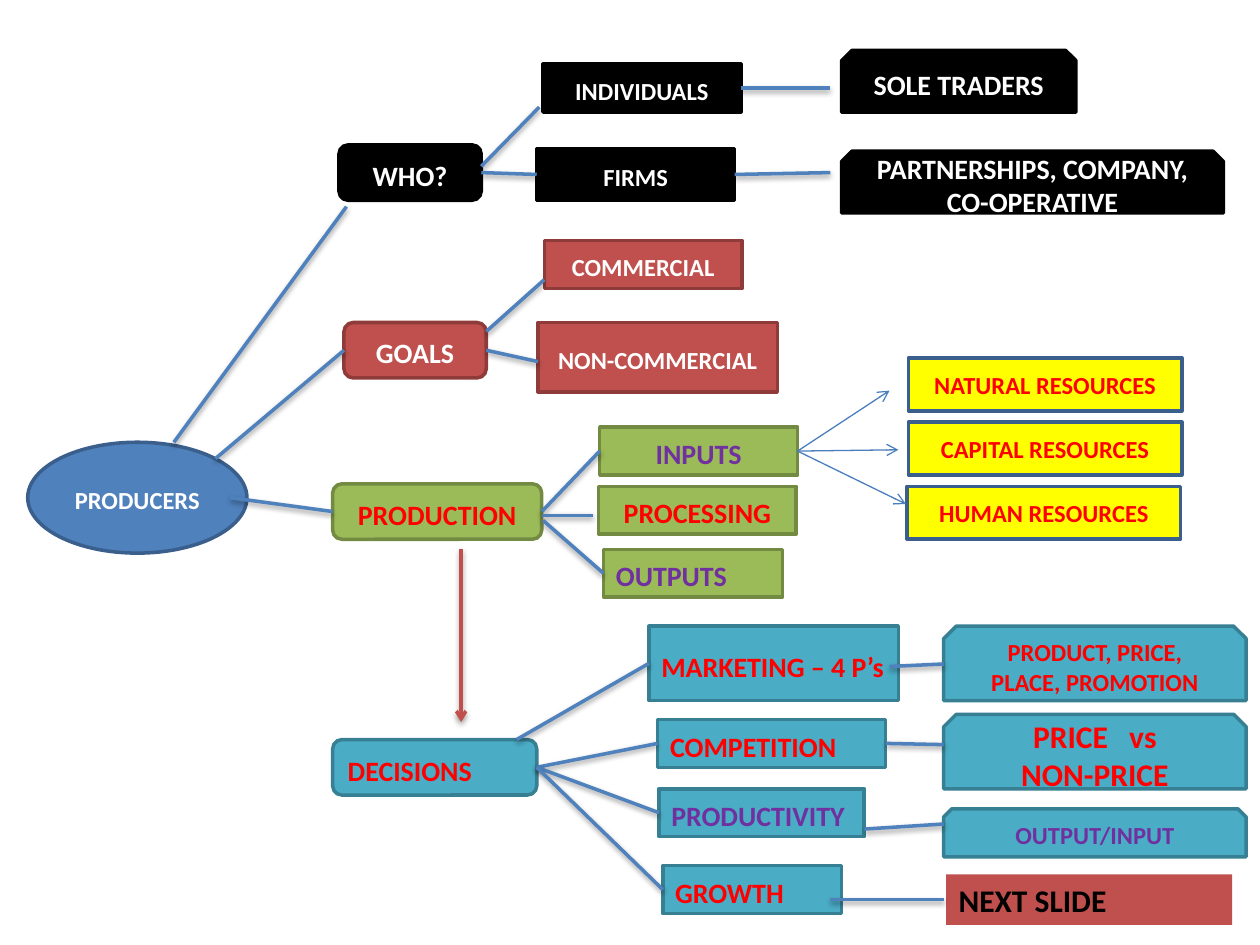
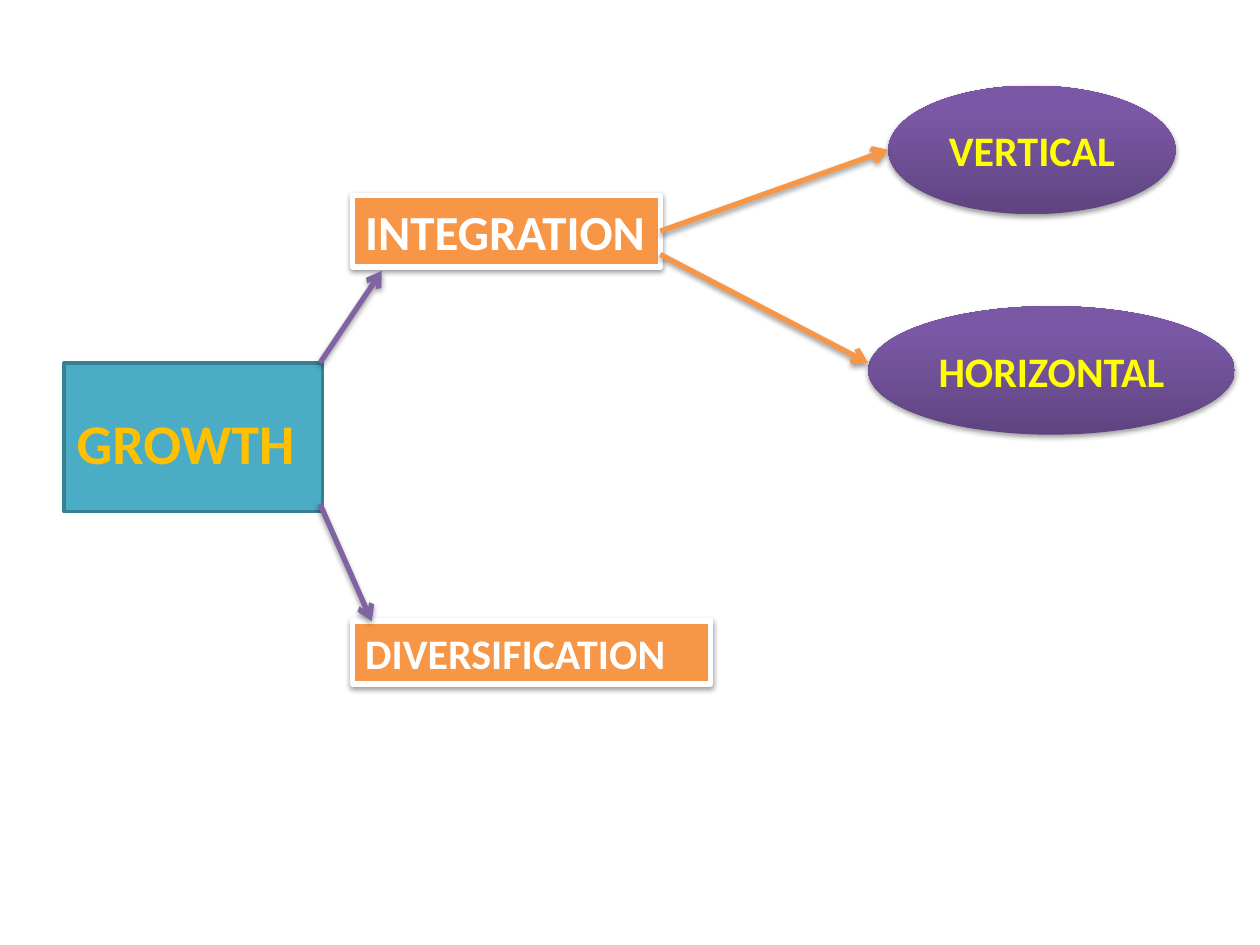
from lxml import etree
from pptx import Presentation
from pptx.dml.color import RGBColor
from pptx.enum.shapes import MSO_CONNECTOR, MSO_SHAPE
from pptx.enum.text import MSO_ANCHOR, MSO_AUTO_SIZE, PP_ALIGN
from pptx.oxml.ns import qn
from pptx.util import Inches, Pt

# Palette
WHITE = RGBColor(0xFF, 0xFF, 0xFF)
BLACK = RGBColor(0x00, 0x00, 0x00)
RED = RGBColor(0xFF, 0x00, 0x00)
VIOLET = RGBColor(0x70, 0x30, 0xA0)
YELLOW = RGBColor(0xFF, 0xFF, 0x00)
GOLD = RGBColor(0xFF, 0xC0, 0x00)
BLUE = RGBColor(0x4F, 0x81, 0xBD)
DARK_BLUE = RGBColor(0x3A, 0x5F, 0x8C)
THIN_BLUE = RGBColor(0x4B, 0x7E, 0xBC)
BRICK = RGBColor(0xC0, 0x50, 0x4D)
DARK_BRICK = RGBColor(0x8E, 0x3B, 0x39)
GREEN = RGBColor(0x9B, 0xBB, 0x59)
DARK_GREEN = RGBColor(0x73, 0x8A, 0x42)
TEAL = RGBColor(0x4B, 0xAC, 0xC6)
DARK_TEAL = RGBColor(0x37, 0x7F, 0x92)
ORANGE = RGBColor(0xF7, 0x96, 0x46)
PURPLE = RGBColor(0x80, 0x64, 0xA2)
DEEP_PURPLE = RGBColor(0x5F, 0x44, 0x80)
SOFT_PURPLE = RGBColor(0x7B, 0x58, 0xA6)

# Fill and outline of each branch
OWNERS = (BLACK, BLACK)
AIMS = (BRICK, DARK_BRICK)
MAKING = (GREEN, DARK_GREEN)
CHOICES = (TEAL, DARK_TEAL)
RESOURCES = (YELLOW, DARK_BLUE)

FONT = "Calibri"
COLUMNS, ROWS = 100, 75
LEFT, RIGHT = 1, 3
RECTANGLE = MSO_SHAPE.RECTANGLE
ROUNDED = MSO_SHAPE.ROUNDED_RECTANGLE
SNIPPED = MSO_SHAPE.SNIP_2_SAME_RECTANGLE


def write_text(shape, text, size=16, color=WHITE, align=PP_ALIGN.CENTER,
               spaced=True, gap=0):
    """Fill a shape with lines of text; gap widens the spaces, in points."""
    frame = shape.text_frame
    frame.word_wrap = True
    for number, line in enumerate(text.split("\n")):
        paragraph = frame.add_paragraph() if number else frame.paragraphs[0]
        paragraph.alignment = align
        if spaced:
            paragraph.line_spacing = 1.15
            paragraph.space_after = Pt(10)
        for piece in line.partition(" ") if gap else (line,):
            if not piece:
                continue
            run = paragraph.add_run()
            run.text = piece
            run.font.name, run.font.size, run.font.bold = FONT, Pt(size), True
            run.font.color.rgb = color
            if piece == " ":
                run._r.get_or_add_rPr().set("spc", str(gap * 100))


class Diagram:
    def __init__(self, presentation):
        self.presentation = presentation
        self.column = presentation.slide_width / COLUMNS
        self.row = presentation.slide_height / ROWS
        self.slide = None

    def new_slide(self):
        layout = self.presentation.slide_layouts[6]
        self.slide = self.presentation.slides.add_slide(layout)

    def place(self, x, y):
        return round(x * self.column), round(y * self.row)

    def add_shadow(self, effects):
        shadow = etree.SubElement(
            effects, qn("a:outerShdw"), blurRad="40000", dist="20000",
            dir="5400000", rotWithShape="0")
        color = etree.SubElement(shadow, qn("a:srgbClr"), val="000000")
        etree.SubElement(color, qn("a:alpha"), val="38000")

    def box(self, kind, area, text, style, line_width=2, shadow=False,
            grow=False, **text_format):
        x, y, width, height = area
        shape = self.slide.shapes.add_shape(
            kind, *self.place(x, y), *self.place(width, height))
        fill, outline = style
        if isinstance(fill, RGBColor):
            shape.fill.solid()
            shape.fill.fore_color.rgb = fill
        else:
            shape.fill.gradient()
            shape.fill.gradient_angle = 90
            for stop, color, position in zip(
                    shape.fill.gradient_stops, fill, (0, 0.8)):
                stop.color.rgb, stop.position = color, position
        if outline is None:
            shape.line.fill.background()
        else:
            shape.line.color.rgb = outline
            shape.line.width = Pt(line_width)
        shape.shadow.inherit = False
        if shadow:
            self.add_shadow(shape._element.spPr.find(qn("a:effectLst")))
        frame = shape.text_frame
        frame.vertical_anchor = MSO_ANCHOR.TOP if grow else MSO_ANCHOR.MIDDLE
        if grow:
            frame.auto_size = MSO_AUTO_SIZE.SHAPE_TO_FIT_TEXT
        write_text(shape, text, **text_format)
        return shape

    def link(self, start, end, color=BLUE, width=2, arrow=False, shadow=True):
        """Join two ends, each a grid point or a (shape, side) pair."""
        points = [(0, 0) if hasattr(tip[0], "shape_id") else self.place(*tip)
                  for tip in (start, end)]
        connector = self.slide.shapes.add_connector(
            MSO_CONNECTOR.STRAIGHT, *points[0], *points[1])
        for tip, connect in ((start, connector.begin_connect),
                             (end, connector.end_connect)):
            if hasattr(tip[0], "shape_id"):
                connect(*tip)
        connector.line.color.rgb = color
        connector.line.width = Pt(width)
        properties = connector._element.spPr
        if arrow:
            etree.SubElement(properties.find(qn("a:ln")), qn("a:tailEnd"),
                             type="arrow")
        effects = etree.SubElement(properties, qn("a:effectLst"))
        if shadow:
            self.add_shadow(effects)


def build_producers(diagram):
    diagram.new_slide()
    box, link = diagram.box, diagram.link
    left_text = {"align": PP_ALIGN.LEFT}

    # Root and main branches
    box(MSO_SHAPE.OVAL, (2.2, 35.1, 17.4, 8.8), "PRODUCERS",
        (BLUE, DARK_BLUE), size=14)
    who = box(ROUNDED, (26.9, 11.5, 11.3, 4.4), "WHO?", OWNERS)
    goals = box(ROUNDED, (27.3, 25.6, 11.3, 4.4), "GOALS", AIMS)
    production = box(ROUNDED, (26.4, 38.4, 16.6, 4.4), "PRODUCTION", MAKING,
                     color=RED)
    decisions = box(ROUNDED, (26.4, 58.7, 16.2, 4.4), "DECISIONS", CHOICES,
                    color=RED, **left_text)
    link((13.8, 35.1), (27.5, 16.4))
    link((17.1, 36.4), (goals, LEFT))
    link((18.3, 39.5), (production, LEFT))
    link((36.6, 43.6), (36.6, 57.3), color=BRICK, arrow=True)

    # Who produces
    individuals = box(RECTANGLE, (43.1, 5.1, 15.7, 3.8), "INDIVIDUALS",
                      OWNERS, size=14)
    firms = box(RECTANGLE, (42.6, 11.8, 15.7, 4.1), "FIRMS", OWNERS, size=14)
    box(SNIPPED, (66.8, 4, 18.6, 4.9), "SOLE TRADERS", OWNERS, spaced=False)
    box(SNIPPED, (66.8, 12, 30.3, 4.9), "PARTNERSHIPS, COMPANY,\nCO-OPERATIVE",
        OWNERS, spaced=False)
    link((38.2, 13.2), (42.8, 8.5))
    link((who, RIGHT), (firms, LEFT))
    link((individuals, RIGHT), (65.9, 7))
    link((firms, RIGHT), (65.9, 13.7))

    # Goals
    box(RECTANGLE, (43.2, 19.1, 15.7, 3.8), "COMMERCIAL", AIMS, size=14)
    box(RECTANGLE, (42.7, 25.6, 19, 5.5), "NON-COMMERCIAL", AIMS, size=14)
    link((38.6, 26.3), (43.2, 22.2))
    link((goals, RIGHT), (42.7, 28.7))

    # Production stages
    inputs = box(RECTANGLE, (47.6, 33.9, 15.7, 3.8), "INPUTS", MAKING,
                 color=VIOLET)
    box(RECTANGLE, (47.5, 38.6, 15.7, 3.8), "PROCESSING", MAKING, color=RED)
    outputs = box(RECTANGLE, (47.9, 43.6, 14.2, 3.8), "OUTPUTS", MAKING,
                  color=VIOLET, **left_text)
    link((production, RIGHT), (inputs, LEFT))
    link((43, 40.9), (47.1, 40.9))
    link((43.1, 41.3), (outputs, LEFT))

    # Resources
    for number, (x, name, tip) in enumerate((
            (72.1, "NATURAL", (70.6, 31)),
            (72.1, "CAPITAL", (71.3, 35.7)),
            (72, "HUMAN", (71.9, 40)))):
        box(RECTANGLE, (x, 28.4 + 5.1 * number, 21.7, 4.2),
            f"{name} RESOURCES", RESOURCES, size=14, color=RED, spaced=False)
        link((inputs, RIGHT), tip, color=THIN_BLUE, width=0.75, arrow=True,
             shadow=False)

    # Decisions
    choices = {}
    for name, area, color in (
            ("MARKETING – 4 P’s", (51.5, 49.7, 19.8, 5.9), RED),
            ("COMPETITION", (52.2, 57.1, 18.1, 3.8), RED),
            ("PRODUCTIVITY", (52.3, 62.6, 16.3, 3.8), VIOLET),
            ("GROWTH", (52.6, 68.7, 14.2, 3.8), RED)):
        choice = box(RECTANGLE, area, name, CHOICES, color=color, **left_text)
        start = (41, 58.7) if not choices else (decisions, RIGHT)
        link(start, (choice, LEFT))
        choices[name] = choice

    # Details of each decision
    for text, y, height, text_format in (
            ("PRODUCT, PRICE,\nPLACE, PROMOTION", 49.7, 5.9,
             {"size": 14, "color": RED}),
            ("PRICE vs\nNON-PRICE", 56.7, 5.9,
             {"size": 18, "color": RED, "gap": 8}),
            ("OUTPUT/INPUT", 64.2, 3.8, {"size": 14, "color": VIOLET})):
        box(SNIPPED, (74.9, y, 24, height), text, CHOICES, spaced=False,
            **text_format)
    box(RECTANGLE, (75.1, 69.4, 22.7, 4), "NEXT SLIDE", (BRICK, None),
        grow=True, size=18, color=BLACK, spaced=False, **left_text)
    link((70.6, 52.9), (74.9, 52.7))
    link((choices["COMPETITION"], RIGHT), (74.9, 59.1))
    link((68.6, 65.8), (74.9, 65.4))
    link((65.9, 71.4), (74.9, 71.4))


def build_growth(diagram):
    diagram.new_slide()
    box, link = diagram.box, diagram.link
    route = {"line_width": 3, "shadow": True, "grow": True, "spaced": False,
             "align": PP_ALIGN.LEFT}

    # Growth and its two routes
    box(RECTANGLE, (5.1, 28.8, 20.5, 11.8), "GROWTH", CHOICES, size=32,
        color=GOLD, align=PP_ALIGN.LEFT)
    integration = box(RECTANGLE, (28, 15.5, 24.4, 5.7), "INTEGRATION",
                      (ORANGE, WHITE), size=28, **route)
    box(RECTANGLE, (28, 49.3, 28.4, 5), "DIVERSIFICATION", (ORANGE, WHITE),
        size=24, **route)

    # Kinds of integration
    for text, area in (("VERTICAL", (70.5, 6.8, 22.8, 10.2)),
                       ("HORIZONTAL", (68.9, 24.3, 29.1, 10.2))):
        box(MSO_SHAPE.OVAL, area, text, ((DEEP_PURPLE, SOFT_PURPLE), None),
            shadow=True, size=24, color=YELLOW, spaced=False)

    # Arrows
    for start, end, color in (
            ((integration, RIGHT), (70.5, 11.9), ORANGE),
            ((52.4, 20.2), (68.9, 28.8), ORANGE),
            ((25.4, 28.8), (30.3, 21.5), PURPLE),
            ((25.4, 40), (29.5, 49.3), PURPLE)):
        link(start, end, color=color, width=3, arrow=True)


def main():
    presentation = Presentation()
    presentation.slide_width = Inches(10)
    presentation.slide_height = Inches(7.5)
    diagram = Diagram(presentation)
    build_producers(diagram)
    build_growth(diagram)
    presentation.save("out.pptx")


if __name__ == "__main__":
    main()
